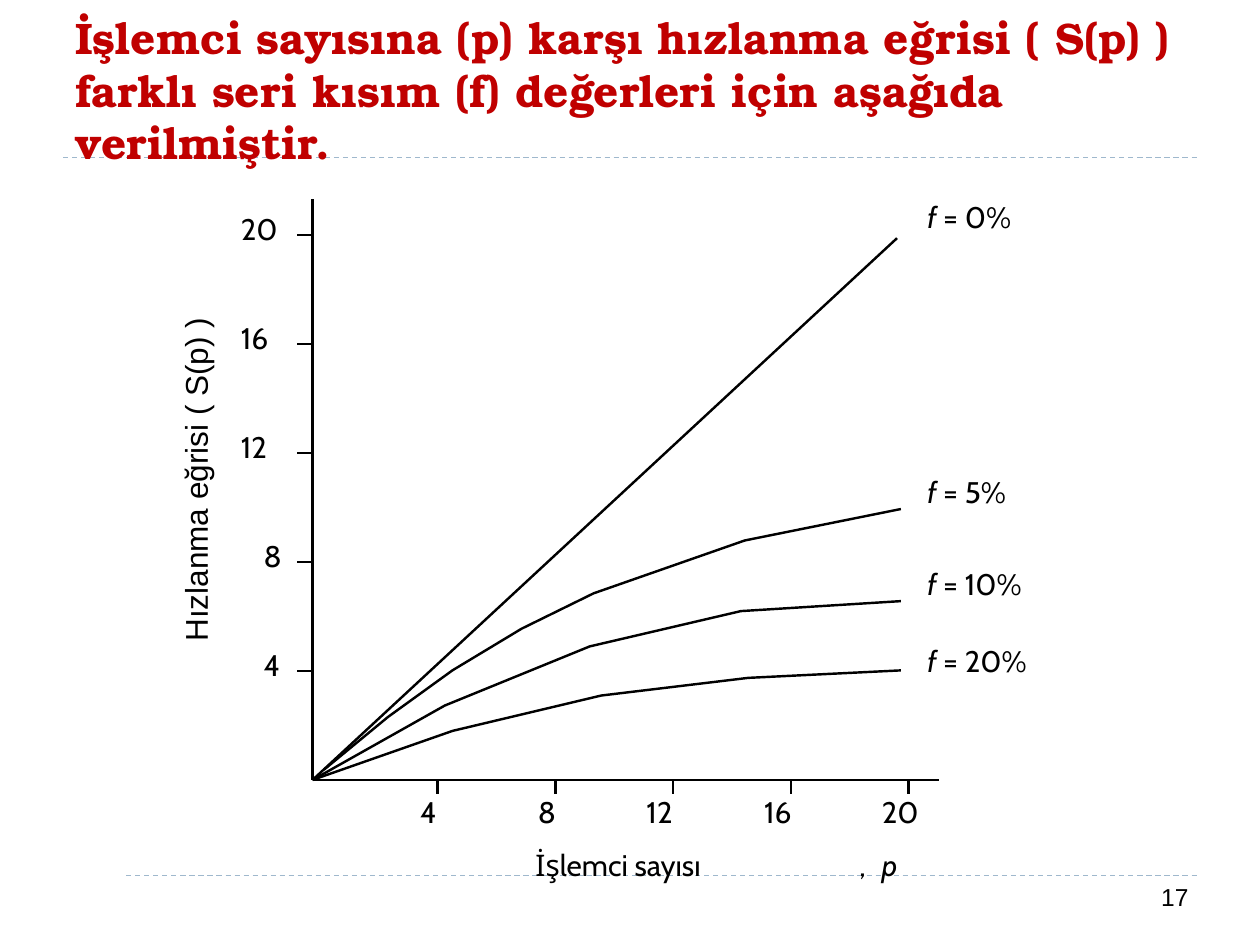
"""Build a slide of speedup curves against processor count."""
import dataclasses

import lxml.etree
import pptx
import pptx.dml.color
import pptx.enum.dml
import pptx.enum.shapes
import pptx.enum.text
import pptx.util

Pt = pptx.util.Pt
ALIGN = pptx.enum.text.PP_ALIGN
ANCHOR = pptx.enum.text.MSO_ANCHOR


@dataclasses.dataclass(frozen=True)
class Theme:
    """Colours, fonts and sizes of the slide."""
    ink: str = "000000"
    title: str = "C00000"
    rule: str = "9FB8CD"
    paper: str = "FFFFFF"
    title_font: str = "TeX Gyre Bonum"
    chart_font: str = "Cabin"
    plain_font: str = "Arial"
    title_size: float = 25.2
    axis_size: float = 18
    chart_size: float = 17
    number_size: float = 14
    rule_width: float = 0.75
    chart_width: float = 1.38


THEME = Theme()
LABEL_HEIGHT = 29.5
TICK_VALUES = (4, 8, 12, 16, 20)
CURVES = (
    ("0%", 332, [(0, 0), (334, 309.6)]),
    ("20%", 78.5, [(0, 0), (80, 28), (165, 48.2), (249, 58.3), (336.2, 62.6)]),
    ("10%", 122.4, [(0, 0), (75.6, 42.5), (158.4, 76.3), (244.8, 96.5), (336.2, 102.2)]),
    ("5%", 175, [(6.5, 5.8), (43.2, 36), (80, 62.6), (119.5, 86.4), (160.6, 106.6),
                 (247, 136.8), (336.2, 154.8)]),
)


def color(code):
    """Return the colour of a hex code."""
    return pptx.dml.color.RGBColor.from_string(code)


def add_text(page, box, text, *, size=THEME.chart_size, font=THEME.chart_font, ink=THEME.ink,
             bold=False, italic=(), align=ALIGN.LEFT, anchor=ANCHOR.TOP, inset=(0, 0),
             wrap=False, rotation=0):
    """Add a text box; text is a string or a list of spans, italic lists slanted span indexes."""
    shape = page.shapes.add_textbox(*map(Pt, box))
    shape.rotation = rotation
    frame = shape.text_frame
    frame.word_wrap = wrap
    frame.vertical_anchor = anchor
    frame.margin_left = frame.margin_right = Pt(inset[0])
    frame.margin_top = frame.margin_bottom = Pt(inset[1])
    para = frame.paragraphs[0]
    para.alignment = align
    for index, part in enumerate([text] if isinstance(text, str) else text):
        span = para.add_run()
        span.text = part
        span.font.size = Pt(size)
        span.font.name = font
        span.font.bold = bold
        span.font.italic = index in italic
        span.font.color.rgb = color(ink)


def add_line(page, start, end, *, ink=THEME.ink, width=THEME.chart_width, dashed=False):
    """Add a straight line without a shadow."""
    line = page.shapes.add_connector(
        pptx.enum.shapes.MSO_CONNECTOR.STRAIGHT, *map(Pt, (*start, *end)))
    line.line.color.rgb = color(ink)
    line.line.width = Pt(width)
    if dashed:
        line.line.dash_style = pptx.enum.dml.MSO_LINE.DASH
    properties = line._element.spPr
    lxml.etree.SubElement(properties, pptx.oxml.ns.qn("a:effectLst"))


def add_curve(page, points):
    """Add an open line through the points."""
    first, *rest = [(Pt(x), Pt(y)) for x, y in points]
    builder = page.shapes.build_freeform(*first)
    builder.add_line_segments(rest, close=False)
    curve = builder.convert_to_shape()
    curve.shadow.inherit = False
    curve.fill.background()
    curve.line.color.rgb = color(THEME.ink)
    curve.line.width = Pt(THEME.chart_width)


def add_frame(page, box):
    """Add the dashed rules, title and page number inside the box."""
    left, top, width, height = box
    for y in (top + height, top + 90):
        add_line(page, (left, y), (left + width, y),
                 ink=THEME.rule, width=THEME.rule_width, dashed=True)
    patch = page.shapes.add_shape(pptx.enum.shapes.MSO_SHAPE.RECTANGLE,
                                  *map(Pt, (left - 10.8, top + height - 9.4, 45.4, 45.4)))
    patch.shadow.inherit = False
    patch.fill.solid()
    patch.fill.fore_color.rgb = color(THEME.paper)
    patch.line.fill.background()
    add_text(page, (left, top + 12.2, width, 77.8),
             "İşlemci sayısına (p) karşı hızlanma eğrisi ( S(p) ) farklı seri kısım (f) "
             "değerleri için aşağıda verilmiştir.",
             size=THEME.title_size, font=THEME.title_font, ink=THEME.title, bold=True,
             anchor=ANCHOR.MIDDLE, inset=(7.2, 3.6), wrap=True)
    add_text(page, (left + width - 165.6, top + height, 167.8, 28.8), "17",
             size=THEME.number_size, font=THEME.plain_font, align=ALIGN.RIGHT,
             inset=(7.2, 3.6), wrap=True)


def add_axes(page, box):
    """Add both axes with ticks, numbers and names along the box."""
    left, top, width, height = box
    base = top + height
    add_line(page, (left, top), (left, base))
    add_line(page, (left, base), (left + width, base))
    for index, value in enumerate(TICK_VALUES):
        text = str(value)
        single = len(text) == 1
        label_width = 14.4 if single else 29.5
        x = left + 71.5 + index * 67.25
        y = base - (index + 1) * 62.3
        add_line(page, (left - 8.6, y), (left, y))
        add_line(page, (x, base), (x, base + 8))
        add_text(page, (left - (28 if single else 41), y - 14, label_width, LABEL_HEIGHT), text)
        add_text(page, (x - (10 if single else 15.2), base + 8, label_width, LABEL_HEIGHT), text)
    name_top = base + 38.2
    add_text(page, (left + 127.4, name_top, 103, 20.9), "İşlemci sayısı")
    add_text(page, (left + 312.5, name_top, 14.4, LABEL_HEIGHT), ",")
    add_text(page, (left + 325.4, name_top, 14.4, LABEL_HEIGHT), "p", italic=(0,))
    add_text(page, (left - 167.8, top + 144.7, 201.6, 28.8), "Hızlanma eğrisi ( S(p) )",
             size=THEME.axis_size, font=THEME.plain_font, inset=(7.2, 3.6), rotation=270)


def add_curves(page, box):
    """Add each speedup curve and its label, measured from the lower left of the box."""
    left, top, width, height = box
    base = top + height
    for share, rise, offsets in CURVES:
        points = [(left + x, base - y) for x, y in offsets]
        if len(points) == 2:
            add_line(page, *points)
        else:
            add_curve(page, points)
        add_text(page, (left + 351.4, base - rise, 89, LABEL_HEIGHT),
                 ["f", f" = {share}"], italic=(0,))


def main():
    """Build and save the deck."""
    deck = pptx.Presentation()
    deck.slide_width, deck.slide_height = Pt(720), Pt(540)
    page = deck.slides.add_slide(deck.slide_layouts[6])
    plot = (178.6, 113.8, 357.8, 331.9)
    add_frame(page, (36, 0, 648, 500.4))
    add_axes(page, plot)
    add_curves(page, plot)
    deck.save("out.pptx")


if __name__ == "__main__":
    main()
